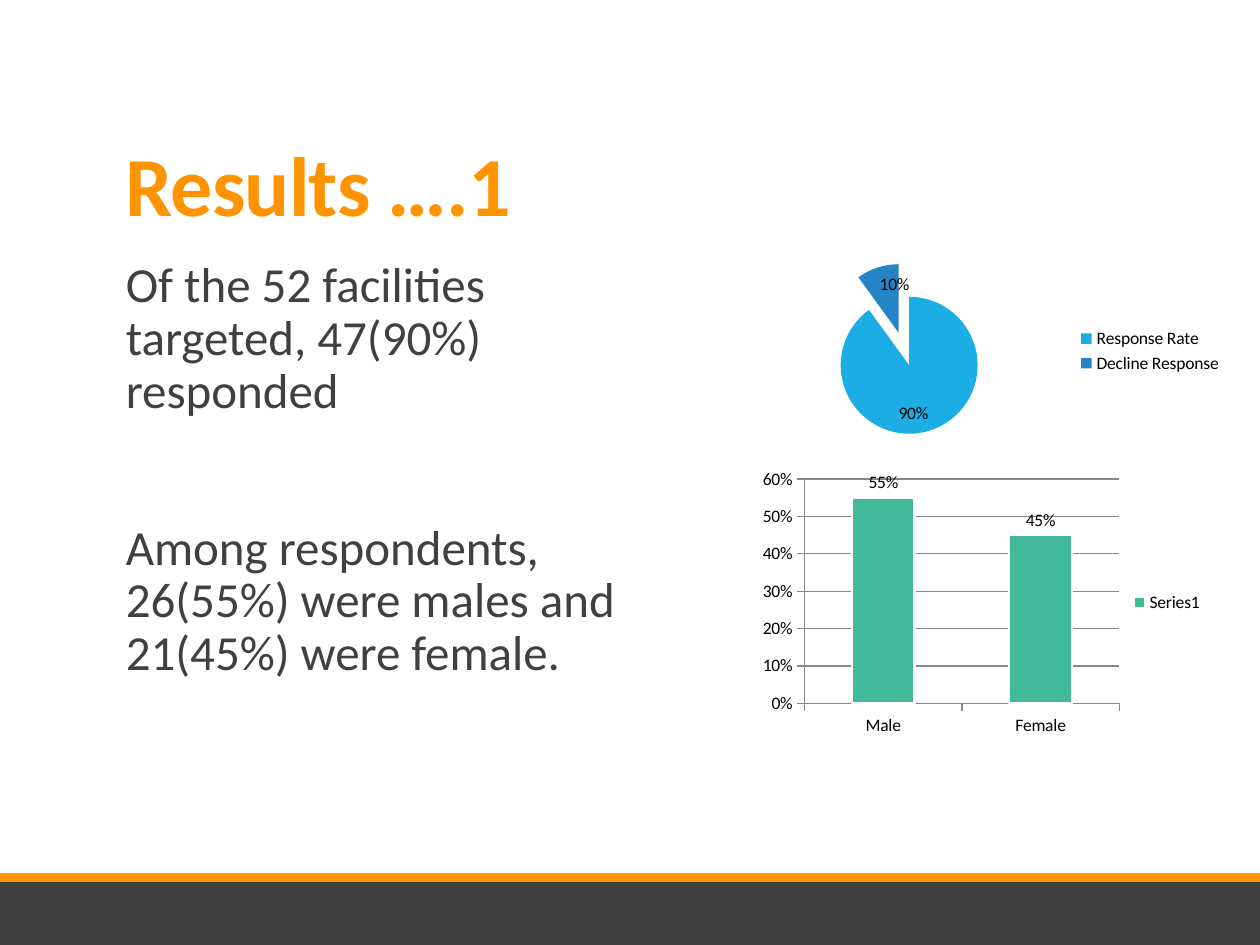
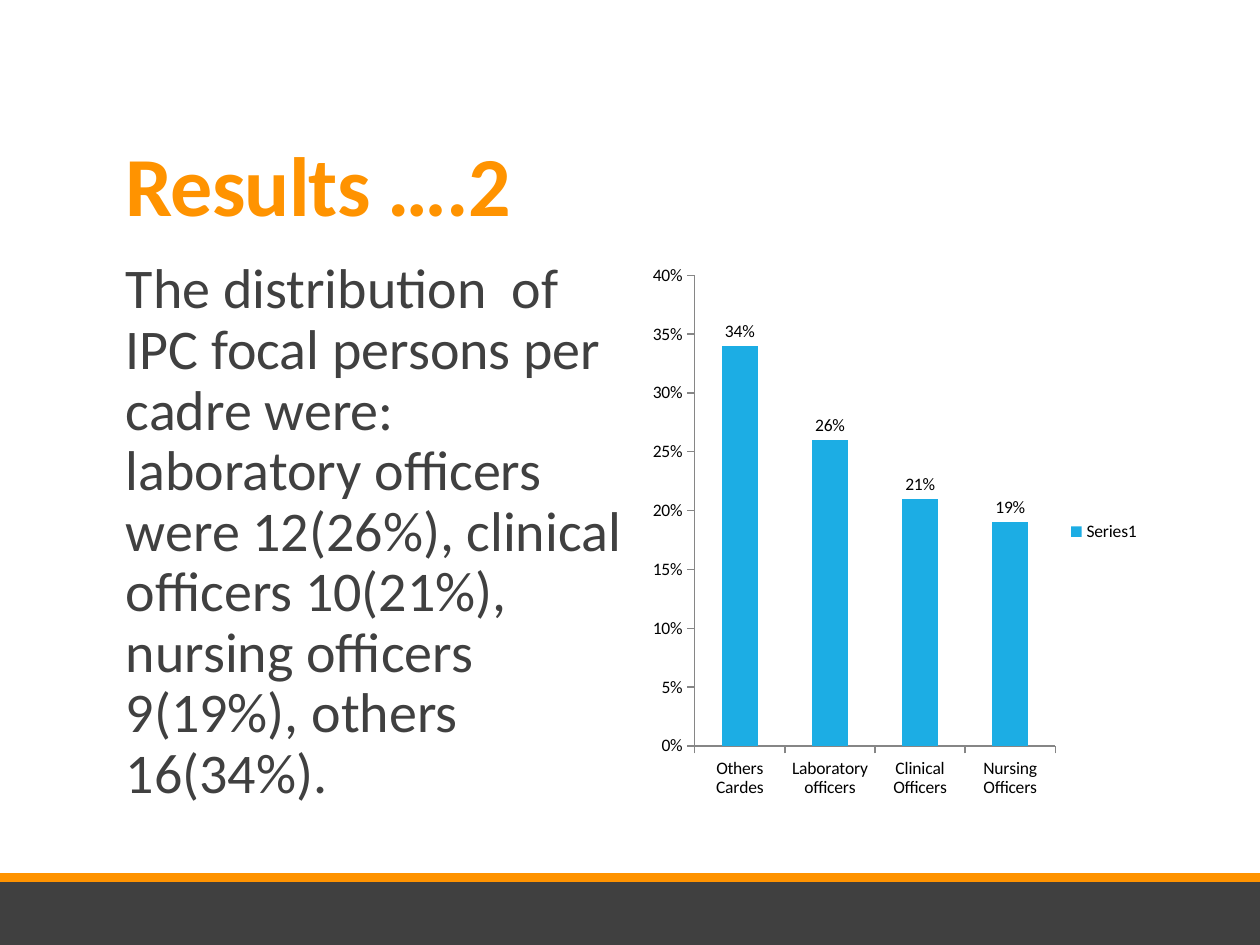
from lxml import etree
from pptx import Presentation
from pptx.chart.data import CategoryChartData
from pptx.dml.color import RGBColor
from pptx.enum.chart import (
    XL_CHART_TYPE as ChartType,
    XL_LABEL_POSITION as LabelPosition,
    XL_LEGEND_POSITION as LegendPosition,
    XL_TICK_MARK as TickMark,
)
from pptx.enum.shapes import MSO_SHAPE as Shape
from pptx.enum.text import MSO_ANCHOR as Anchor
from pptx.oxml import parse_xml
from pptx.oxml.ns import nsdecls, qn
from pptx.util import Pt

FONT = "Calibri"
ORANGE, CHARCOAL, WHITE, BLACK = "FF9300", "404040", "FFFFFF", "000000"
SKY, BLUE, GREEN, GRAY = "1CADE4", "2683C6", "42BA97", "868686"
PAGE_WIDTH, PAGE_HEIGHT = 720, 540
BANDS = [(504, 36, CHARCOAL), (499, 5, ORANGE)]
TITLE_AREA = (64.8, 22.3, 594, 114.5)
BODY_AREA = (64.8, 145.4, 291.6, 316.8)


def color(value):
    return RGBColor.from_string(value)


def paint(part, value):
    part.fill.solid()
    part.fill.fore_color.rgb = color(value)


def draw_line(line, value, width):
    line.color.rgb = color(value)
    line.width = Pt(width)


class ResultsDeck:
    """Holds the shared style and the current page of the results deck."""

    def __init__(self):
        self.deck = Presentation()
        self.deck.slide_width = Pt(PAGE_WIDTH)
        self.deck.slide_height = Pt(PAGE_HEIGHT)
        self.page = None

    def add_page(self, title):
        self.page = self.deck.slides.add_slide(self.deck.slide_layouts[6])
        paint(self.page.background, WHITE)
        for top, height, fill in BANDS:
            self.band(top, height, fill)
        self.title(title)

    def band(self, top, height, fill):
        box = self.page.shapes.add_shape(
            Shape.RECTANGLE, 0, Pt(top), Pt(PAGE_WIDTH), Pt(height))
        box.shadow.inherit = False
        paint(box, fill)
        box.line.fill.background()

    def text(self, area, content, size, fill, bold, line_spacing):
        box = self.page.shapes.add_textbox(*map(Pt, area))
        frame = box.text_frame
        frame.word_wrap = True
        frame.text = content
        for para in frame.paragraphs:
            para.line_spacing = line_spacing
            for span in para.runs:
                span.font.name = FONT
                span.font.size = Pt(size)
                span.font.bold = bold
                span.font.color.rgb = color(fill)
        return frame

    def title(self, content):
        frame = self.text(TITLE_AREA, content, 48, ORANGE, True, 0.85)
        frame.vertical_anchor = Anchor.BOTTOM
        for properties in frame.paragraphs[0]._p.iter(qn("a:rPr")):
            properties.set("spc", "-50")

    def body(self, paragraphs, size, gap=12):
        frame = self.text(
            BODY_AREA, "\n".join(paragraphs), size, CHARCOAL, False, 0.9)
        frame.margin_right = 0
        for para in frame.paragraphs:
            para.space_before, para.space_after = Pt(gap), Pt(2)

    def chart(self, kind, area, name, values, label_position):
        data = CategoryChartData(number_format="0%")
        data.categories = list(values)
        data.add_series(name, list(values.values()))
        chart = self.page.shapes.add_chart(kind, *map(Pt, area), data).chart
        chart.has_title = False
        chart.font.name = FONT
        chart.font.size = Pt(10)
        chart.font.color.rgb = color(BLACK)
        chart.has_legend = True
        chart.legend.position = LegendPosition.RIGHT
        chart.legend.include_in_layout = False
        plot = chart.plots[0]
        plot.vary_by_categories = kind == ChartType.PIE
        plot.has_data_labels = True
        labels = plot.data_labels
        labels.show_value = True
        labels.show_percentage = False
        labels.number_format = "0%"
        labels.number_format_is_linked = False
        labels.position = label_position
        return chart

    def pie(self, area, name, values, fills, explosion, layout):
        chart = self.chart(
            ChartType.PIE, area, name, values, LabelPosition.INSIDE_END)
        series = chart.plots[0].series[0]
        for index, fill in enumerate(fills):
            paint(series.points[index].format, fill)
        first_point = series._element.find(qn("c:dPt"))
        first_point.addprevious(parse_xml(
            f'<c:explosion {nsdecls("c")} val="{explosion}"/>'))
        plot_area = chart._chartSpace.find(f'.//{qn("c:plotArea")}')
        for old in plot_area.findall(qn("c:layout")):
            plot_area.remove(old)
        holder = etree.Element(qn("c:layout"))
        manual = etree.SubElement(holder, qn("c:manualLayout"))
        settings = [("layoutTarget", "inner"), ("xMode", "edge"),
                    ("yMode", "edge"), *zip("xywh", layout)]
        for tag, value in settings:
            etree.SubElement(manual, qn(f"c:{tag}")).set("val", str(value))
        plot_area.insert(0, holder)

    def columns(self, area, values, fill, top, step, grid=False, outline=None):
        chart = self.chart(ChartType.COLUMN_CLUSTERED, area, "Series1",
                           values, LabelPosition.OUTSIDE_END)
        chart.plots[0].gap_width = 150
        bars = chart.plots[0].series[0].format
        paint(bars, fill)
        if outline:
            draw_line(bars.line, outline, 1.5)
        for axis in (chart.category_axis, chart.value_axis):
            axis.major_tick_mark = TickMark.OUTSIDE
            axis.minor_tick_mark = TickMark.NONE
            draw_line(axis.format.line, GRAY, 0.75)
        scale = chart.value_axis
        scale.minimum_scale, scale.maximum_scale = 0, top
        scale.major_unit = step
        scale.tick_labels.number_format = "0%"
        scale.tick_labels.number_format_is_linked = False
        scale.has_major_gridlines = grid
        if grid:
            draw_line(scale.major_gridlines.format.line, GRAY, 0.75)


def main():
    results = ResultsDeck()

    results.add_page("Results ….1")
    results.body(["Of the 52 facilities targeted, 47(90%) responded",
                  "Among respondents, 26(55%) were males and "
                  "21(45%) were female."], 28, gap=57)
    results.pie((423.4, 146.2, 282.2, 108.7), "Series 1",
                {"Response Rate": 0.9, "Decline Response": 0.1},
                [SKY, BLUE], 25, (0.04, 0.04, 0.58, 0.9))
    results.columns((430.6, 265, 264.2, 158.4), {"Male": 0.55, "Female": 0.45},
                    GREEN, 0.6, 0.1, grid=True, outline=WHITE)

    results.add_page("Results ….2")
    results.body(["The distribution  of IPC focal persons per cadre were: "
                  "laboratory officers were 12(26%), clinical officers "
                  "10(21%), nursing officers 9(19%), others 16(34%)."], 32)
    results.columns((367.2, 145.4, 291.6, 316.8),
                    {"Others Cardes": 0.34, "Laboratory officers": 0.26,
                     "Clinical Officers": 0.21, "Nursing Officers": 0.19},
                    SKY, 0.4, 0.05)

    results.deck.save("out.pptx")


if __name__ == "__main__":
    main()
